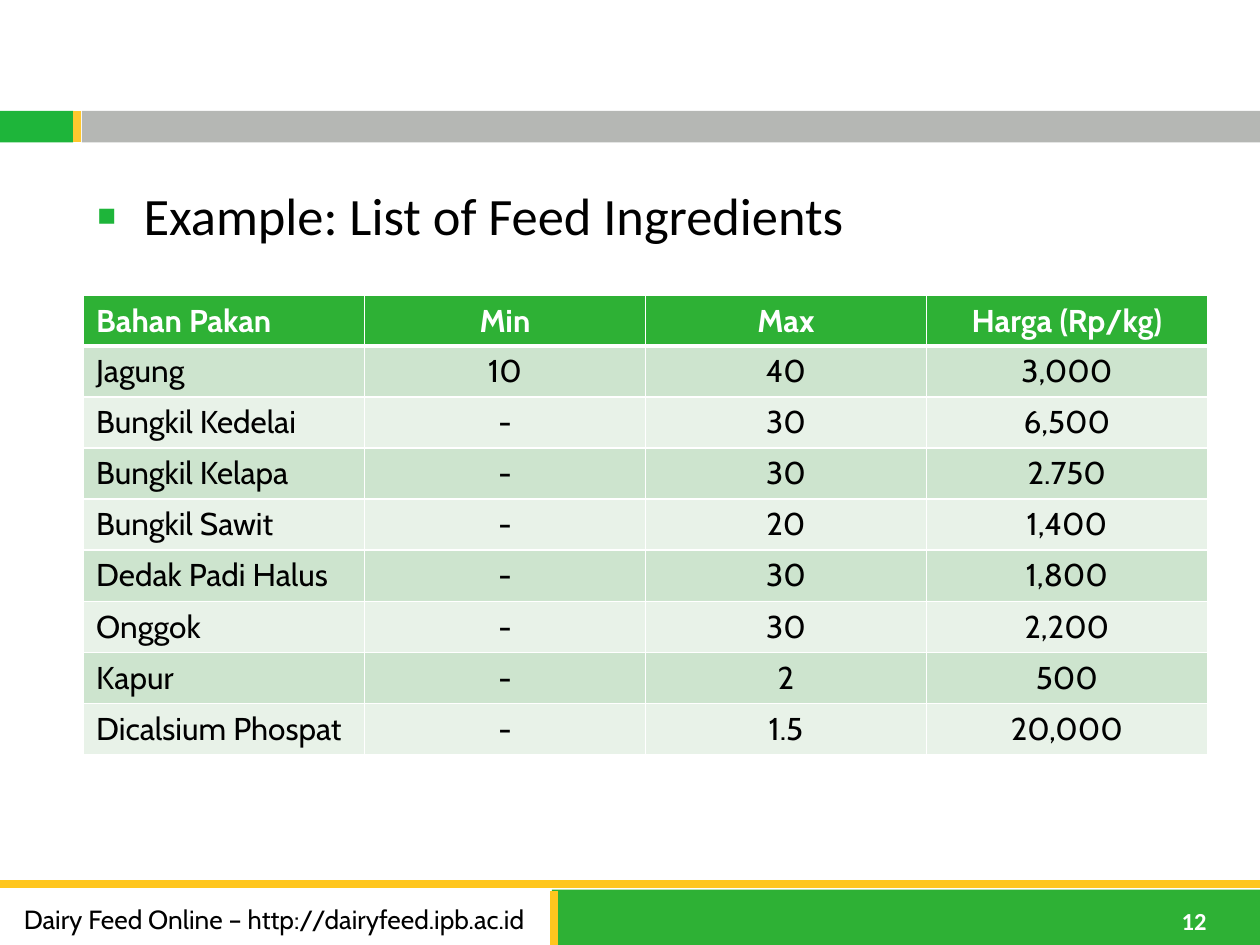
from dataclasses import dataclass

from lxml.etree import SubElement
from pptx import Presentation
from pptx.dml.color import RGBColor
from pptx.enum.shapes import MSO_CONNECTOR, MSO_SHAPE
from pptx.enum.text import MSO_ANCHOR, MSO_AUTO_SIZE, PP_ALIGN
from pptx.oxml.ns import qn
from pptx.util import Pt

WHITE, BLACK, GREEN, FLAG_GREEN = "FFFFFF", "000000", "2EB135", "1EB53A"
ROW_TINTS = ("CDE4CE", "E8F2E8")


@dataclass
class Band:
    left: float
    top: float
    width: float
    height: float
    color: str


@dataclass
class Rule:
    x1: float
    y1: float
    x2: float
    y2: float
    color: str


@dataclass
class Label:
    left: float
    top: float
    width: float
    height: float
    text: str
    wrap: bool
    font: dict


BANDS = [
    Band(0, 59.8, 720, 25.2, WHITE),
    Band(0, 63.4, 41.8, 18, FLAG_GREEN),
    Band(46.8, 63.4, 673.2, 18, "B5B7B4"),
    Band(0.7, 507.6, 720, 30.2, WHITE),
    Band(315.4, 508.3, 406, 34.6, GREEN),
]
RULES = [
    Rule(0, 505.4, 720, 505.4, "FFC61E"),
    Rule(316.8, 509, 316.8, 543.6, "FFC61E"),
    Rule(44.2, 63.4, 44.2, 81.4, "FFC82E"),
]
LABELS = [
    Label(668.2, 514.1, 31.7, 24.5, "12", False,
          {"size": Pt(14), "name": "Calibri", "bold": True, "color": WHITE}),
    Label(6.5, 512.6, 311, 25.2, "Dairy Feed Online – http://dairyfeed.ipb.ac.id", True,
          {"size": Pt(15), "name": "Cabin", "color": BLACK}),
]
INGREDIENTS = [
    ("Bahan Pakan", "Min", "Max", "Harga (Rp/kg)"),
    ("Jagung", "10", "40", "3,000"),
    ("Bungkil Kedelai", "-", "30", "6,500"),
    ("Bungkil Kelapa", "-", "30", "2.750"),
    ("Bungkil Sawit", "-", "20", "1,400"),
    ("Dedak Padi Halus", "-", "30", "1,800"),
    ("Onggok", "-", "30", "2,200"),
    ("Kapur", "-", "2", "500"),
    ("Dicalsium Phospat", "-", "1.5", "20,000"),
]


def rgb(color: str) -> RGBColor:
    return RGBColor.from_string(color)


def format_font(font, values: dict) -> None:
    for key, value in values.items():
        if key == "color":
            font.color.rgb = rgb(value)
        else:
            setattr(font, key, value)


def draw_band(slide, band: Band) -> None:
    bar = slide.shapes.add_shape(MSO_SHAPE.RECTANGLE, Pt(band.left), Pt(band.top),
                                 Pt(band.width), Pt(band.height))
    bar.shadow.inherit = False
    bar.fill.solid()
    bar.fill.fore_color.rgb = rgb(band.color)
    bar.line.fill.background()


def draw_rule(slide, rule: Rule) -> None:
    line = slide.shapes.add_connector(MSO_CONNECTOR.STRAIGHT, Pt(rule.x1), Pt(rule.y1),
                                      Pt(rule.x2), Pt(rule.y2))
    line.line.width = Pt(4.5)
    line.line.color.rgb = rgb(rule.color)
    SubElement(line._element.spPr, qn("a:effectLst"))


def draw_label(slide, label: Label) -> None:
    frame = slide.shapes.add_textbox(Pt(label.left), Pt(label.top), Pt(label.width),
                                     Pt(label.height)).text_frame
    frame.word_wrap = label.wrap
    frame.auto_size = MSO_AUTO_SIZE.SHAPE_TO_FIT_TEXT
    paragraph = frame.paragraphs[0]
    paragraph.text = label.text
    format_font(paragraph.font, label.font)


def add_borders(cell, bottom: float) -> None:
    properties = cell._tc.get_or_add_tcPr()
    for side, width in {"L": 1, "R": 1, "T": 1, "B": bottom}.items():
        border = SubElement(properties, qn(f"a:ln{side}"), w=str(Pt(width)))
        fill = SubElement(border, qn("a:solidFill"))
        SubElement(fill, qn("a:srgbClr"), val=WHITE)


def draw_ingredients(slide, rows: list) -> None:
    table = slide.shapes.add_table(len(rows), len(rows[0]), Pt(47.8), Pt(168.8),
                                   Pt(642.2), Pt(262)).table
    for r, row in enumerate(rows):
        header = r == 0
        table.rows[r].height = Pt(16.6 if header else 29.2)
        for c, text in enumerate(row):
            cell = table.cell(r, c)
            add_borders(cell, bottom=3 if header else 1)
            cell.fill.solid()
            cell.fill.fore_color.rgb = rgb(GREEN if header else ROW_TINTS[(r - 1) % 2])
            paragraph = cell.text_frame.paragraphs[0]
            paragraph.text = text
            paragraph.alignment = PP_ALIGN.CENTER if c else PP_ALIGN.LEFT
            format_font(paragraph.runs[0].font, {
                "size": Pt(18), "name": "Cabin", "bold": header,
                "color": WHITE if header else BLACK})


def fill_body(body, text: str) -> None:
    body.left, body.top, body.width, body.height = Pt(47.8), Pt(97.9), Pt(642.2), Pt(387.4)
    frame = body.text_frame
    for key, value in {"word_wrap": True, "auto_size": MSO_AUTO_SIZE.NONE,
                       "vertical_anchor": MSO_ANCHOR.TOP, "margin_top": Pt(6.6)}.items():
        setattr(frame, key, value)
    paragraph = frame.paragraphs[0]
    paragraph.text = text
    paragraph.space_before = Pt(0)
    # Square green bullet with a hanging indent
    properties = paragraph._p.get_or_add_pPr()
    properties.set("marL", str(Pt(27)))
    properties.set("indent", str(Pt(-27)))
    SubElement(SubElement(properties, qn("a:buClr")), qn("a:srgbClr"), val=FLAG_GREEN)
    SubElement(properties, qn("a:buSzPct"), val="115000")
    SubElement(properties, qn("a:buChar"), char="▪")
    format_font(paragraph.runs[0].font, {"size": Pt(30), "name": "Calibri", "color": BLACK})


def main() -> None:
    deck = Presentation()
    deck.slide_width, deck.slide_height = Pt(720), Pt(540)
    slide = deck.slides.add_slide(deck.slide_layouts[1])
    slide.background.fill.solid()
    slide.background.fill.fore_color.rgb = rgb(WHITE)

    # The slide has no title
    title = slide.shapes.title._element
    title.getparent().remove(title)

    # Header and footer
    for band in BANDS:
        draw_band(slide, band)
    for rule in RULES:
        draw_rule(slide, rule)
    for label in LABELS:
        draw_label(slide, label)

    # Content, with the heading in front
    draw_ingredients(slide, INGREDIENTS)
    body = slide.placeholders[1]
    fill_body(body, "Example: List of Feed Ingredients")
    slide.shapes._spTree.append(body._element)

    deck.save("out.pptx")


if __name__ == "__main__":
    main()
